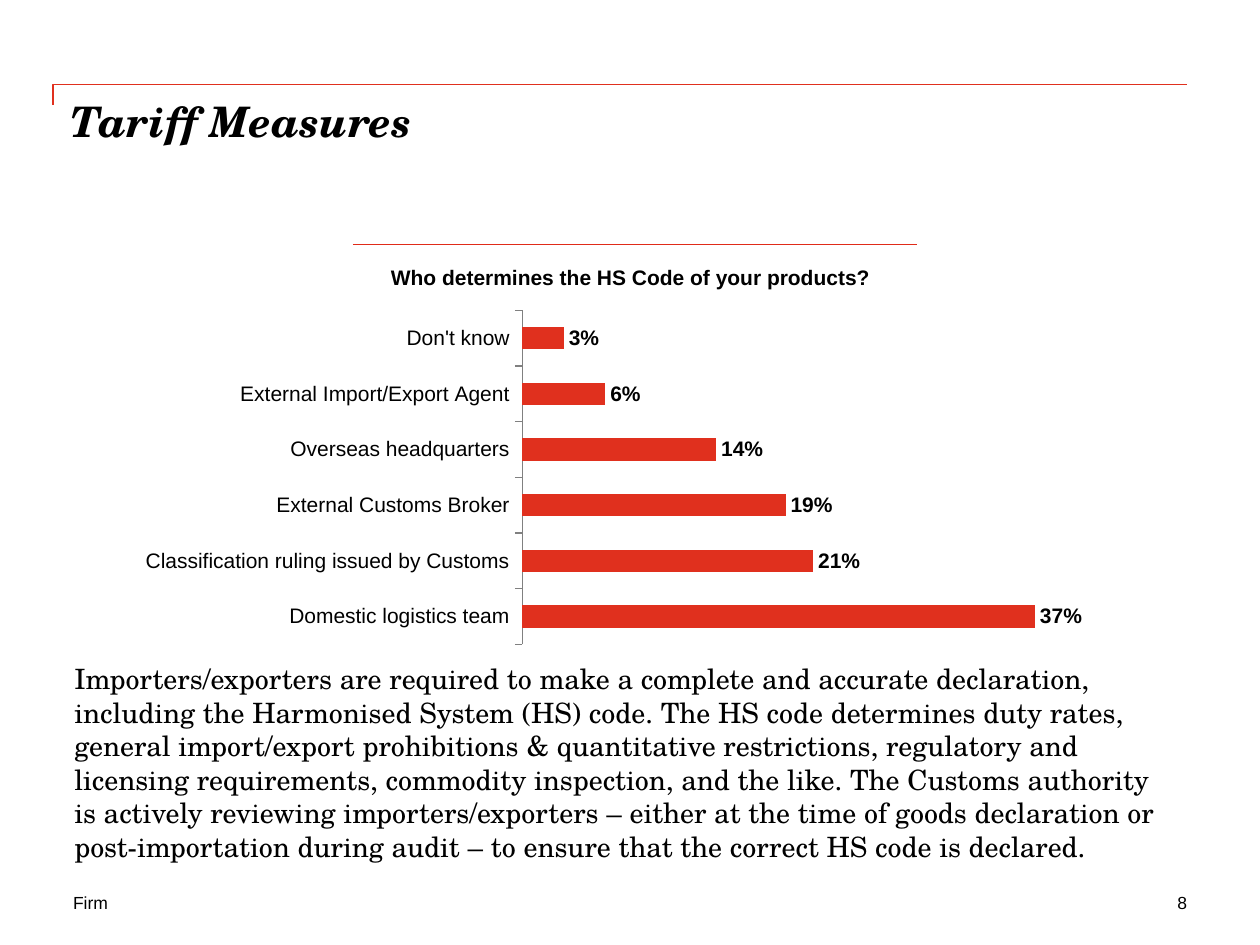
from lxml import etree
from pptx import Presentation
from pptx.chart.data import CategoryChartData as ChartData
from pptx.dml.color import RGBColor
from pptx.enum.chart import XL_CHART_TYPE as Kind, XL_LABEL_POSITION as Spot
from pptx.enum.chart import XL_TICK_MARK as Tick
from pptx.enum.shapes import MSO_CONNECTOR as Line
from pptx.enum.text import MSO_ANCHOR as Anchor, PP_ALIGN as Align
from pptx.oxml.ns import qn
from pptx.util import Inches, Pt

BLACK = RGBColor(0x00, 0x00, 0x00)
RED = RGBColor(0xE0, 0x30, 0x1E)
RULE = RGBColor(0xE0, 0x2B, 0x19)
GREY = RGBColor(0x80, 0x80, 0x80)
SANS, SERIF = "Arial", "TeX Gyre Schola"

deck = Presentation()
deck.slide_width, deck.slide_height = Inches(10), Inches(7.5)
slide = deck.slides.add_slide(deck.slide_layouts[6])
shapes = slide.shapes


def style(font, **values):
    font.color.rgb = BLACK
    for key, value in values.items():
        setattr(font, key, value)


# Corner line above the heading
corner = shapes.build_freeform(Inches(0.42), Inches(0.83))
corner.add_line_segments(
    [(Inches(0.42), Inches(0.67)), (Inches(9.42), Inches(0.67))], close=False)
frame = corner.convert_to_shape()
frame.shadow.inherit = False
frame.fill.background()
frame.line.color.rgb = RED
frame.line.width = Pt(1)

# Bar chart
data = ChartData(number_format="0%")
data.categories = [
    "Domestic logistics team", "Classification ruling issued by Customs",
    "External Customs Broker", "Overseas headquarters",
    "External Import/Export Agent", "Don't know"]
data.add_series("Series 1", [0.37, 0.21, 0.19, 0.14, 0.06, 0.03])
chart = shapes.add_chart(
    Kind.BAR_CLUSTERED, Inches(0.98), Inches(2.41), Inches(7.72), Inches(2.76),
    data).chart
chart.has_legend = chart.has_title = False
style(chart.font, name=SANS, size=Pt(18))

plot = chart.plots[0]
plot.gap_width = 150
plot.vary_by_categories = False
fill = plot.series[0].format.fill
fill.solid()
fill.fore_color.rgb = RED
plot.has_data_labels = True
labels = plot.data_labels
labels.show_value = True
labels.number_format, labels.number_format_is_linked = "0%", False
labels.position = Spot.OUTSIDE_END
style(labels.font, name=SANS, size=Pt(12), bold=True)

axis = chart.category_axis
axis.major_tick_mark = Tick.OUTSIDE
axis.format.line.color.rgb = GREY
style(axis.tick_labels.font, name=SANS, size=Pt(12), bold=False)
scale = chart.value_axis
scale.visible = scale.has_major_gridlines = False
scale.minimum_scale, scale.maximum_scale = 0, 0.4

# Fixed place of the bars inside the chart
area = plot._element.getparent()
for old in area.findall(qn("c:layout")):
    area.remove(old)
layout = etree.Element(qn("c:layout"))
area.insert(0, layout)
manual = etree.SubElement(layout, qn("c:manualLayout"))
for tag, val in {"layoutTarget": "inner", "xMode": "edge", "yMode": "edge",
                 "x": "0.41", "y": "0.02", "w": "0.57", "h": "0.96"}.items():
    etree.SubElement(manual, qn(f"c:{tag}")).set("val", val)

# Rule above the chart title
rule = shapes.add_connector(
    Line.STRAIGHT, Inches(2.8), Inches(1.94), Inches(7.28), Inches(1.94))
rule.line.color.rgb = RULE
rule.line.width = Pt(0.75)
etree.SubElement(rule._element.spPr, qn("a:effectLst"))

# Texts: place, alignment, wording, font
body = (
    "Importers/exporters are required to make a complete and accurate "
    "declaration, including the Harmonised System (HS) code. The HS code "
    "determines duty rates, general import/export prohibitions & quantitative "
    "restrictions, regulatory and licensing requirements, commodity "
    "inspection, and the like. The Customs authority is actively reviewing "
    "importers/exporters – either at the time of goods declaration or "
    "post-importation during audit – to ensure that the correct HS code is "
    "declared.")
small = dict(name=SANS, size=Pt(10))
texts = [
    ((0.58, 7.08, 2.83, 0.17), Align.LEFT, "Firm", small),
    ((7.75, 7.08, 1.67, 0.17), Align.RIGHT, "8", small),
    ((0.59, 5.25, 8.74, 1.57), Align.LEFT, body,
     dict(name=SERIF, size=Pt(16))),
    ((0.68, 2.1, 8.65, 0.47), Align.CENTER,
     "Who determines the HS Code of your products?",
     dict(name=SANS, size=Pt(12), bold=True)),
    ((0.56, 0.76, 8.83, 1), Align.LEFT, "Tariff Measures",
     dict(name=SERIF, size=Pt(24), bold=True, italic=True)),
]
for place, align, words, look in texts:
    frame = shapes.add_textbox(*map(Inches, place)).text_frame
    for key, value in dict(
            margin_left=0, margin_right=0, margin_top=0, margin_bottom=0,
            word_wrap=True, vertical_anchor=Anchor.TOP).items():
        setattr(frame, key, value)
    para = frame.paragraphs[0]
    para.alignment = align
    run = para.add_run()
    run.text = words
    style(run.font, **look)

deck.save("out.pptx")
